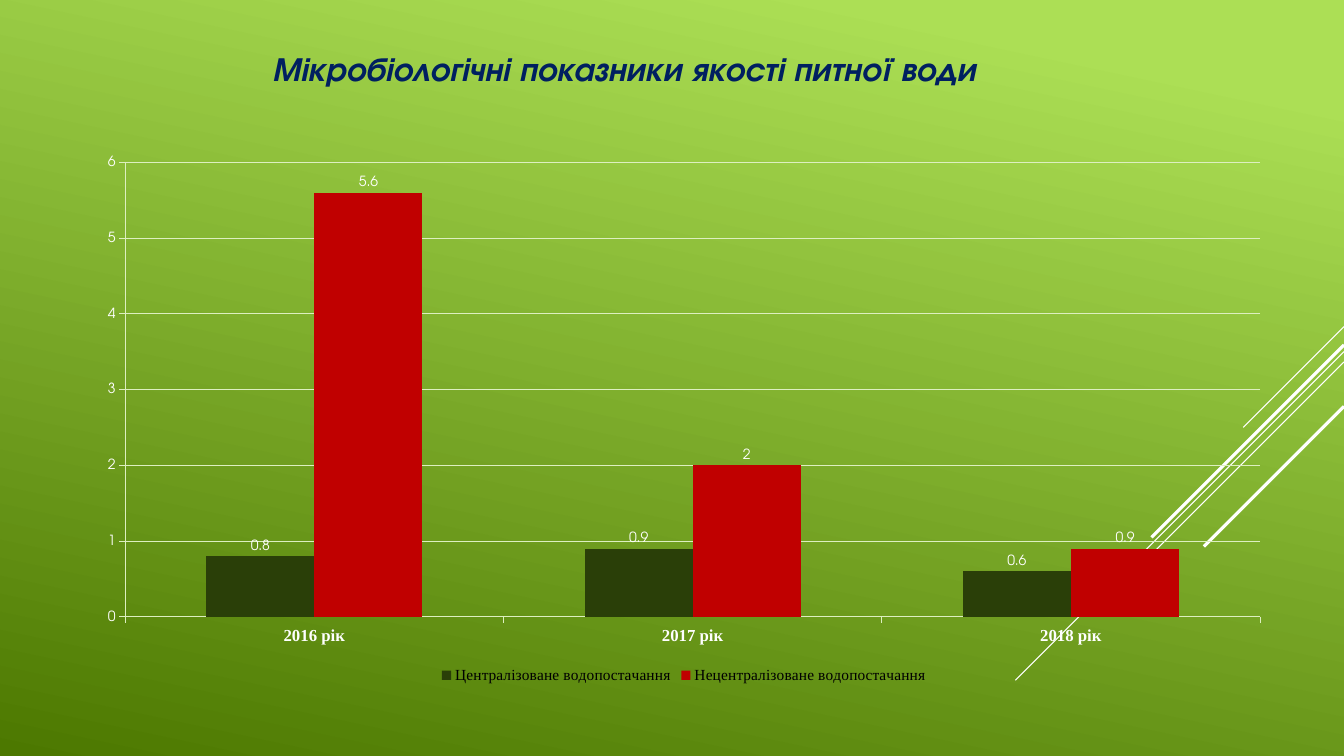
from typing import Any, NamedTuple

from lxml.etree import SubElement
from pptx import Presentation
from pptx.chart.data import CategoryChartData
from pptx.dml.color import RGBColor
from pptx.enum.chart import XL_CHART_TYPE as ChartType
from pptx.enum.chart import XL_LABEL_POSITION as LabelPosition
from pptx.enum.chart import XL_LEGEND_POSITION as LegendPosition
from pptx.enum.chart import XL_TICK_MARK as TickMark
from pptx.enum.shapes import MSO_CONNECTOR as Connector
from pptx.enum.text import MSO_ANCHOR as Anchor
from pptx.enum.text import MSO_AUTO_SIZE as AutoSize
from pptx.oxml.ns import qn
from pptx.util import Cm, Pt

SLIDE_WIDTH, SLIDE_HEIGHT = 33.87, 19.05
WHITE = "FFFFFF"
SANS, SERIF = "TeX Gyre Adventor", "Times New Roman"


class Ray(NamedTuple):
    """A 45° line from the right slide edge, going down and left."""
    top: float
    run: float
    weight: float


class Supply(NamedTuple):
    name: str
    values: tuple[float, ...]
    fill: str


RAYS = [
    Ray(8.23, 2.54, 0.75),
    Ray(8.86, 8.28, 0.75),
    Ray(9.12, 5.27, 0.75),
    Ray(8.69, 4.85, 2.25),
    Ray(10.24, 3.53, 2.25),
]
YEARS = ["2016 рік", "2017 рік", "2018 рік"]
SUPPLIES = [
    Supply("Централізоване водопостачання", (0.8, 0.9, 0.6), "2A3F08"),
    Supply("Нецентралізоване водопостачання", (5.6, 2, 0.9), "C00000"),
]
TITLE_FONT = {"name": SANS, "size": Pt(24), "bold": True, "italic": True}
CHART_FONT = {"name": SANS, "size": Pt(10)}
YEAR_FONT = {"name": SERIF, "size": Pt(12), "bold": True}
LEGEND_FONT = {"name": SERIF, "size": Pt(11)}


def rgb(value: str) -> RGBColor:
    return RGBColor.from_string(value)


def style_font(font: Any, values: dict[str, Any], color: str) -> None:
    for attribute, value in values.items():
        setattr(font, attribute, value)
    font.color.rgb = rgb(color)


def style_line(line: Any, color: str, weight: float) -> None:
    line.color.rgb = rgb(color)
    line.width = Pt(weight)


def paint_background(slide: Any) -> None:
    fill = slide.background.fill
    fill.gradient()
    fill.gradient_angle = 258
    for stop, (position, color) in zip(
        fill.gradient_stops, [(0.1, "ACDF55"), (1, "4C7800")]
    ):
        stop.position = position
        stop.color.rgb = rgb(color)


def add_ray(slide: Any, ray: Ray) -> None:
    connector = slide.shapes.add_connector(
        Connector.STRAIGHT,
        Cm(SLIDE_WIDTH), Cm(ray.top),
        Cm(SLIDE_WIDTH - ray.run), Cm(ray.top + ray.run),
    )
    style_line(connector.line, WHITE, ray.weight)
    SubElement(connector.element.spPr, qn("a:effectLst"))


def add_supply_chart(slide: Any) -> None:
    data = CategoryChartData()
    data.categories = YEARS
    for supply in SUPPLIES:
        data.add_series(supply.name, supply.values)
    chart = slide.shapes.add_chart(
        ChartType.COLUMN_CLUSTERED,
        Cm(2.11), Cm(3.66), Cm(30.25), Cm(13.67), data,
    ).chart
    chart.has_title = False
    style_font(chart.font, CHART_FONT, WHITE)

    plot = chart.plots[0]
    plot.gap_width = 150
    plot.overlap = 0
    plot.vary_by_categories = False
    for series, supply in zip(plot.series, SUPPLIES):
        series.format.fill.solid()
        series.format.fill.fore_color.rgb = rgb(supply.fill)
        series.data_labels.show_value = True
        series.data_labels.position = LabelPosition.OUTSIDE_END

    for axis in (chart.category_axis, chart.value_axis):
        axis.major_tick_mark = TickMark.OUTSIDE
        axis.minor_tick_mark = TickMark.NONE
        style_line(axis.format.line, "DDEFC0", 0.75)
    style_font(chart.category_axis.tick_labels.font, YEAR_FONT, WHITE)
    scale = chart.value_axis
    scale.minimum_scale, scale.maximum_scale, scale.major_unit = 0, 6, 1
    scale.has_major_gridlines = True
    style_line(scale.major_gridlines.format.line, "DDEFC0", 0.75)

    chart.has_legend = True
    chart.legend.position = LegendPosition.BOTTOM
    chart.legend.include_in_layout = False
    style_font(chart.legend.font, LEGEND_FONT, "000000")


def add_title(slide: Any) -> None:
    frame = slide.shapes.add_textbox(
        Cm(6.6), Cm(1.09), Cm(23.62), Cm(2.06)
    ).text_frame
    frame.word_wrap = True
    frame.auto_size = AutoSize.SHAPE_TO_FIT_TEXT
    frame.vertical_anchor = Anchor.TOP
    run = frame.paragraphs[0].add_run()
    run.text = "Мікробіологічні показники якості питної води"
    style_font(run.font, TITLE_FONT, "002060")


def main() -> None:
    presentation = Presentation()
    presentation.slide_width = Cm(SLIDE_WIDTH)
    presentation.slide_height = Cm(SLIDE_HEIGHT)
    slide = presentation.slides.add_slide(presentation.slide_layouts[6])
    paint_background(slide)
    for ray in RAYS:
        add_ray(slide, ray)
    add_supply_chart(slide)
    add_title(slide)
    presentation.save("out.pptx")


if __name__ == "__main__":
    main()
